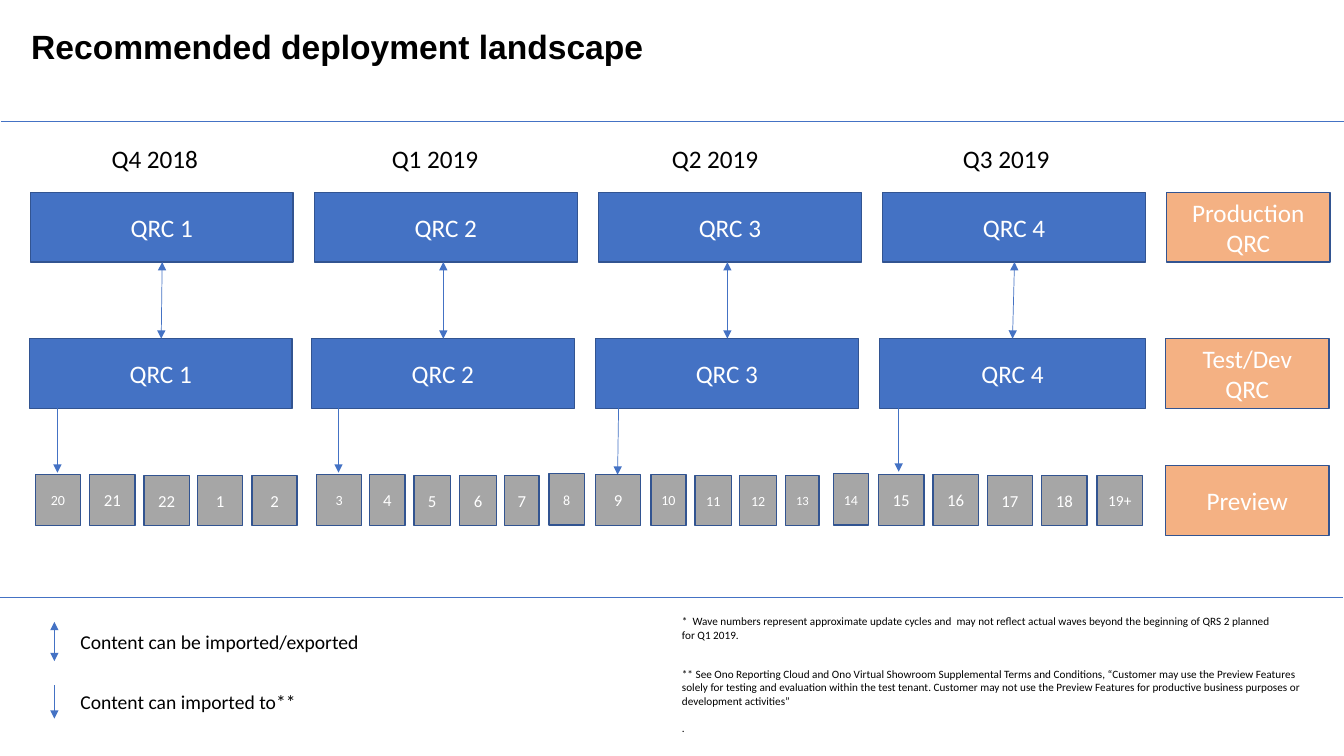
from typing import NamedTuple

from lxml.etree import SubElement
from pptx import Presentation
from pptx.dml.color import RGBColor
from pptx.enum.shapes import MSO_CONNECTOR, MSO_SHAPE
from pptx.enum.text import MSO_ANCHOR, PP_ALIGN
from pptx.oxml.ns import qn
from pptx.util import Inches, Pt

BLUE = RGBColor(0x44, 0x72, 0xC4)
NAVY = RGBColor(0x32, 0x54, 0x91)
ORANGE = RGBColor(0xF4, 0xB1, 0x83)
GREY = RGBColor(0xA6, 0xA6, 0xA6)
WHITE = RGBColor(0xFF, 0xFF, 0xFF)
BLACK = RGBColor(0, 0, 0)

PROD_Y, TEST_Y, PREVIEW_Y, BOX_H = 1.91, 3.36, 4.62, 0.69
LABEL_W, WAVE_BOTTOM = 1.62, 5.215


class Wave(NamedTuple):
    text: str
    x: float
    w: float = 0.45
    size: int = 12
    top: float = 4.72
    bottom: float = WAVE_BOTTOM


class Quarter(NamedTuple):
    title: str
    title_x: float
    prod_x: float
    test_x: float
    test_w: float
    sync_top_x: float
    sync_bottom_x: float
    down_top_x: float
    down_bottom_x: float
    down_end: float
    waves: tuple[Wave, ...]


class Label(NamedTuple):
    text: str
    x: float
    y: float


class Legend(NamedTuple):
    text: str
    y: float
    w: float
    arrow_top: float
    arrow_bottom: float
    both_ways: bool


class Note(NamedTuple):
    text: str
    y: float
    w: float
    h: float


QUARTERS = (
    Quarter("Q4 2018", 1.01, 0.3, 0.29, 2.61, 1.61, 1.6, 0.57, 0.57, 4.69, (
        Wave("20", 0.35, size=10, top=4.71), Wave("21", 0.89, top=4.71),
        Wave("22", 1.43), Wave("1", 1.96), Wave("2", 2.5))),
    Quarter("Q1 2019", 3.79, 3.12, 3.09, 2.61, 4.4, 4.4, 3.36, 3.36, 4.69, (
        Wave("3", 3.14, size=10, top=4.71), Wave("4", 3.67, 0.35, top=4.71),
        Wave("5", 4.11, 0.36), Wave("6", 4.56, 0.37), Wave("7", 5.01, 0.34),
        Wave("8", 5.45, 0.35, 10, 4.7, 5.21))),
    Quarter("Q2 2019", 6.57, 5.94, 5.91, 2.61, 7.22, 7.22, 6.14, 6.13, 4.71, (
        Wave("9", 5.91, top=4.71), Wave("10", 6.46, 0.35, 10, 4.71),
        Wave("11", 6.9, 0.36, 10), Wave("12", 7.34, 0.37, 10),
        Wave("13", 7.8, 0.33, 9), Wave("14", 8.27, 0.35, 10, 4.7, 5.21))),
    Quarter("Q3 2019", 9.46, 8.76, 8.73, 2.64, 10.07, 10.05, 8.92, 8.92, 4.68, (
        Wave("15", 8.72, top=4.71), Wave("16", 9.26, top=4.71),
        Wave("17", 9.8), Wave("18", 10.34), Wave("19+", 10.89, size=11))),
)

LABELS = (
    Label("Production QRC", 11.58, PROD_Y),
    Label("Test/Dev\nQRC", 11.57, TEST_Y),
    Label("Preview", 11.57, PREVIEW_Y),
)

LEGENDS = (
    Legend("Content can be imported/exported", 6.2, 2.99, 6.17, 6.56, True),
    Legend("Content can imported to**", 6.8, 2.36, 6.8, 7.13, False),
)

NOTES = (
    Note("*  Wave numbers represent approximate update cycles and  may not reflect actual "
         "waves beyond the beginning of QRS 2 planned for Q1 2019.", 6.05, 6.05, 0.37),
    Note("** See Ono Reporting Cloud and Ono Virtual Showroom Supplemental Terms and "
         "Conditions, “Customer may use the Preview Features solely for testing and "
         "evaluation within the test tenant. Customer may not use the Preview Features for "
         "productive business purposes or development activities”\n.", 6.57, 6.45, 0.77),
)


def write(shape, text: str, *, size: int = 18, color: RGBColor = BLACK,
          font: str = "Calibri", bold: bool = False, align=PP_ALIGN.LEFT,
          anchor=MSO_ANCHOR.TOP, wrap: bool = True, gap: int = 0) -> None:
    tf = shape.text_frame
    tf.word_wrap = wrap
    tf.vertical_anchor = anchor
    for i, line in enumerate(text.split("\n")):
        p = tf.add_paragraph() if i else tf.paragraphs[0]
        p.alignment = align
        p.space_before = Pt(gap if i else 0)
        r = p.add_run()
        r.text = line
        r.font.name = font
        r.font.size = Pt(size)
        r.font.bold = bold
        r.font.color.rgb = color


def add_box(s, text: str, x: float, y: float, w: float, h: float,
            fill: RGBColor, size: int = 18, inset: float = 0.1) -> None:
    box = s.shapes.add_shape(MSO_SHAPE.RECTANGLE, Inches(x), Inches(y), Inches(w), Inches(h))
    box.shadow.inherit = False
    box.fill.solid()
    box.fill.fore_color.rgb = fill
    box.line.color.rgb = NAVY
    box.line.width = Pt(1)
    box.text_frame.margin_left = box.text_frame.margin_right = Inches(inset)
    write(box, text, size=size, color=WHITE, align=PP_ALIGN.CENTER, anchor=MSO_ANCHOR.MIDDLE)


def add_text(s, text: str, x: float, y: float, w: float, h: float, **fmt) -> None:
    write(s.shapes.add_textbox(Inches(x), Inches(y), Inches(w), Inches(h)), text, **fmt)


def add_line(s, x1: float, y1: float, x2: float, y2: float,
             head: bool = False, tail: bool = False) -> None:
    line = s.shapes.add_connector(MSO_CONNECTOR.STRAIGHT, Inches(x1), Inches(y1),
                                  Inches(x2), Inches(y2))
    line.line.color.rgb = BLUE
    line.line.width = Pt(0.5)
    ln = line.line._get_or_add_ln()
    for shown, tag in ((head, "a:headEnd"), (tail, "a:tailEnd")):
        if shown:
            SubElement(ln, qn(tag), type="triangle")
    SubElement(line._element.spPr, qn("a:effectLst"))


def add_quarter(s, quarter: Quarter, number: int) -> None:
    q = quarter
    name = f"QRC {number}"
    add_text(s, q.title, q.title_x, 1.37, 1.51, 0.4)
    add_box(s, name, q.prod_x, PROD_Y, 2.61, BOX_H, BLUE)
    add_box(s, name, q.test_x, TEST_Y, q.test_w, BOX_H, BLUE)
    add_line(s, q.sync_top_x, PROD_Y + BOX_H, q.sync_bottom_x, TEST_Y, head=True, tail=True)
    add_line(s, q.down_top_x, TEST_Y + BOX_H, q.down_bottom_x, q.down_end, tail=True)
    for wave in q.waves:
        add_box(s, wave.text, wave.x, wave.top, wave.w, wave.bottom - wave.top,
                GREY, wave.size, inset=0)


def main() -> None:
    prs = Presentation()
    prs.slide_width, prs.slide_height = Inches(13.34), Inches(7.5)
    s = prs.slides.add_slide(prs.slide_layouts[5])

    title = s.shapes.title
    title.left, title.top = Inches(0.21), Inches(0.21)
    title.width, title.height = Inches(12.78), Inches(0.5)
    write(title, "Recommended deployment landscape", size=24, font="Arial", bold=True)

    add_line(s, 0.01, 1.2, 13.34, 1.2)
    add_line(s, 0, 5.93, 13.33, 5.93)
    for number, quarter in enumerate(QUARTERS, 1):
        add_quarter(s, quarter, number)
    for label in LABELS:
        add_box(s, label.text, label.x, label.y, LABEL_W, BOX_H, ORANGE)
    for item in LEGENDS:
        add_line(s, 0.54, item.arrow_top, 0.54, item.arrow_bottom,
                 head=item.both_ways, tail=True)
        add_text(s, item.text, 0.7, item.y, item.w, 0.34, size=14, wrap=False)
    for note in NOTES:
        add_text(s, note.text, 6.67, note.y, note.w, note.h, size=8, gap=10)

    prs.save("out.pptx")


if __name__ == "__main__":
    main()
